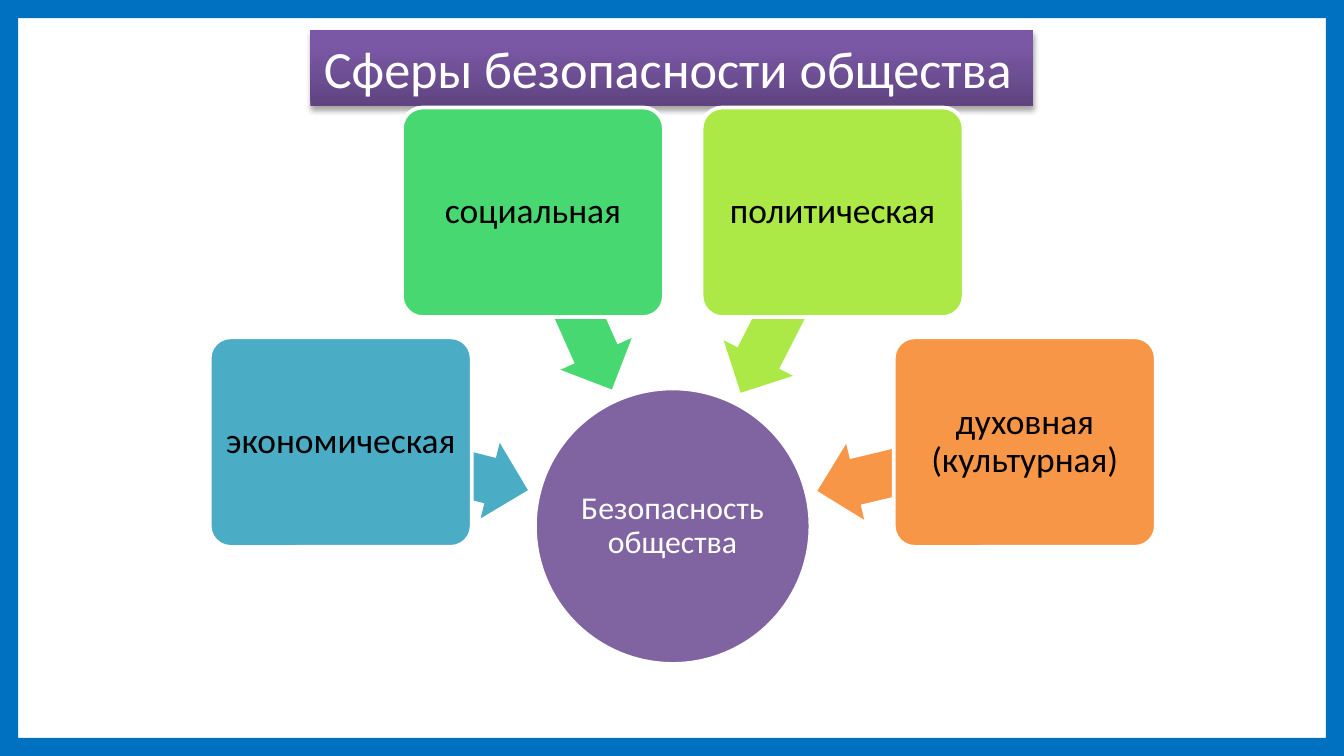
from pptx import Presentation
from pptx.dml.color import RGBColor
from pptx.enum.shapes import MSO_SHAPE as Preset
from pptx.enum.text import MSO_ANCHOR as Anchor, MSO_AUTO_SIZE as AutoSize, PP_ALIGN as Align
from pptx.oxml import parse_xml
from pptx.oxml.ns import nsdecls
from pptx.util import Inches, Pt

# Content
TITLE = "Сферы безопасности общества"
CENTER = "Безопасность общества"
# label, colour, card left and top, arrow left, top, width and rotation
SPHERES = [
    ("экономическая", "4BACC6", (1.56, 2.51), (2.51, 3.18, 1.44, 194.2)),
    ("социальная", "47D872", (2.99, 0.8), (3.54, 1.95, 1.44, 246)),
    ("политическая", "ACE946", (5.22, 0.8), (5.1, 1.96, 1.51, 297.1)),
    ("духовная (культурная)", "F79646", (6.65, 2.51), (6.06, 3.18, 1.58, 346.6)),
]

# Style
FONT = "Calibri"
WIDTH = 10
HEIGHT = WIDTH * 9 / 16
CARD_WIDTH, CARD_HEIGHT = 1.95, 1.56
ARROW_HEIGHT = 0.58
TITLE_STOPS = [(0, "5F4480"), (80, "7B58A6"), (100, "7C57A8")]


def color(value):
    return RGBColor.from_string(value)


def add_block(slide, preset, box, fill, adjustments=(), outline=None):
    shape = slide.shapes.add_shape(preset, *[Inches(length) for length in box])
    shape.shadow.inherit = False
    for index, value in enumerate(adjustments):
        shape.adjustments[index] = value
    shape.fill.solid()
    shape.fill.fore_color.rgb = color(fill)
    if outline:
        shape.line.color.rgb = color(outline)
        shape.line.width = Pt(2)
    else:
        shape.line.fill.background()
    return shape


def write(shape, text, size, text_color, inset, align=Align.CENTER, spacing=0.9):
    frame = shape.text_frame
    frame.word_wrap = True
    frame.vertical_anchor = Anchor.MIDDLE
    frame.margin_left = frame.margin_right = Inches(inset)
    frame.margin_top = frame.margin_bottom = Inches(min(inset, 0.05))
    paragraph = frame.paragraphs[0]
    paragraph.alignment = align
    paragraph.line_spacing = spacing
    run = paragraph.add_run()
    run.text = text
    run.font.name = FONT
    run.font.size = Pt(size)
    run.font.color.rgb = color(text_color)


def style_title(title):
    """Add the vertical gradient and the soft shadow."""
    stops = "".join(
        f'<a:gs pos="{position * 1000}"><a:srgbClr val="{value}"/></a:gs>'
        for position, value in TITLE_STOPS
    )
    properties = title.element.spPr
    properties.append(parse_xml(
        f'<a:gradFill {nsdecls("a")} rotWithShape="1"><a:gsLst>{stops}</a:gsLst>'
        '<a:lin ang="16200000" scaled="0"/></a:gradFill>'
    ))
    properties.append(parse_xml(
        f'<a:effectLst {nsdecls("a")}>'
        '<a:outerShdw blurRad="40000" dist="23000" dir="5400000" rotWithShape="0">'
        '<a:srgbClr val="000000"><a:alpha val="35000"/></a:srgbClr>'
        '</a:outerShdw></a:effectLst>'
    ))


def main():
    presentation = Presentation()
    presentation.slide_width = Inches(WIDTH)
    presentation.slide_height = Inches(HEIGHT)
    slide = presentation.slides.add_slide(presentation.slide_layouts[5])

    # Title
    title = slide.shapes.title
    title.left, title.top = Inches(2.31), Inches(0.22)
    title.width, title.height = Inches(5.38), Inches(0.57)
    style_title(title)
    write(title, TITLE, 28, "FFFFFF", 0.1, Align.LEFT, 1.0)
    title.text_frame.auto_size = AutoSize.NONE

    # Slide border
    add_block(slide, Preset.FRAME, (0, 0, WIDTH, HEIGHT), "0070C0", [0.024])

    # Central circle
    circle = add_block(slide, Preset.OVAL, (3.98, 2.89, 2.05, 2.05), "8064A2", outline="FFFFFF")
    write(circle, CENTER, 17, "FFFFFF", 0.01)

    # Spheres: each card covers the tail of its arrow
    for label, fill, (left, top), (arrow_left, arrow_top, length, rotation) in SPHERES:
        arrow = add_block(slide, Preset.LEFT_ARROW,
                          (arrow_left, arrow_top, length, ARROW_HEIGHT), fill, [0.6, 0.5])
        arrow.rotation = rotation
        card = add_block(slide, Preset.ROUNDED_RECTANGLE,
                         (left, top, CARD_WIDTH, CARD_HEIGHT), fill, [0.1], "FFFFFF")
        write(card, label, 19, "000000", 0.04)

    presentation.save("out.pptx")


if __name__ == "__main__":
    main()
